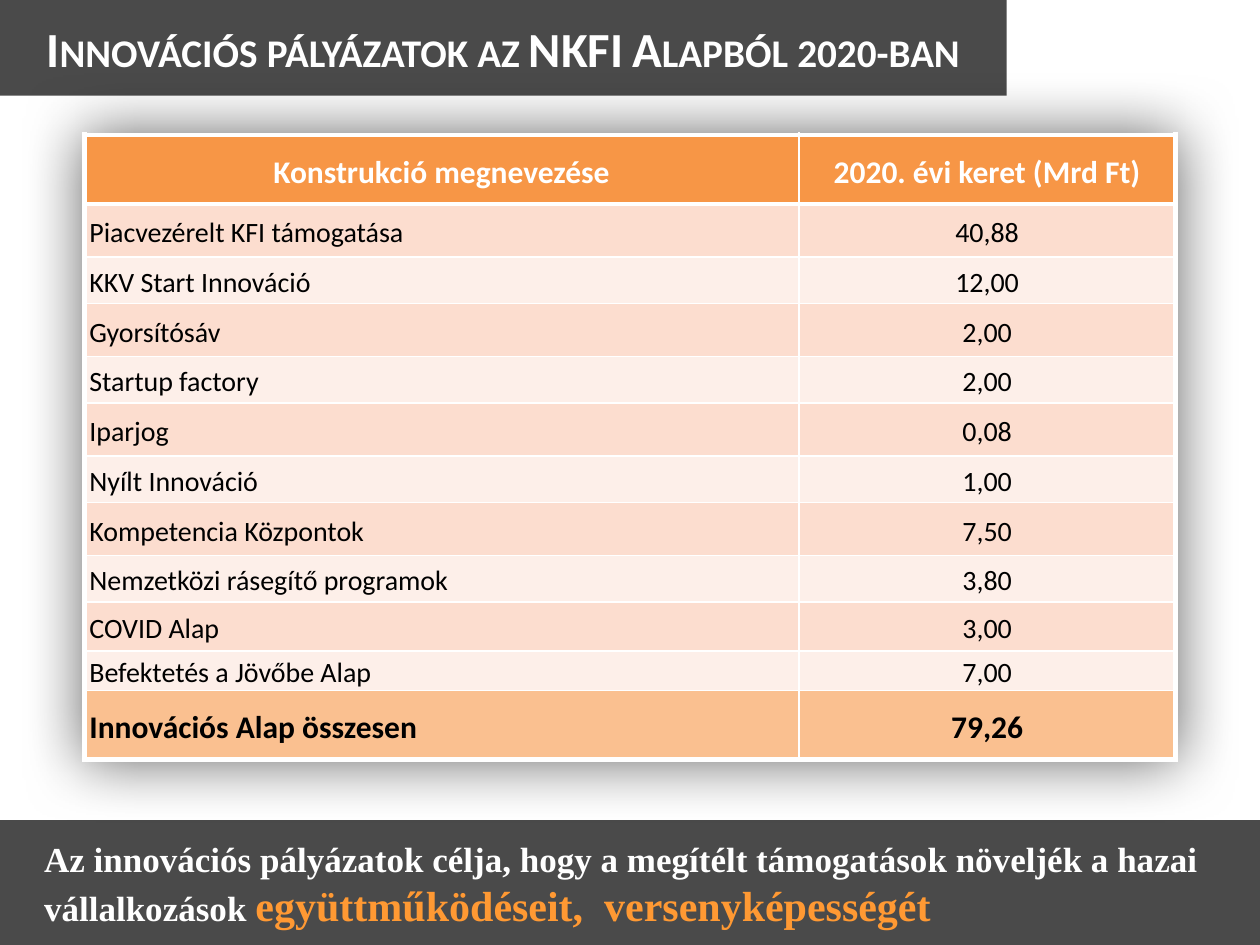
from lxml import etree
from pptx import Presentation
from pptx.dml.color import RGBColor
from pptx.enum.shapes import MSO_SHAPE
from pptx.enum.text import MSO_ANCHOR, PP_ALIGN
from pptx.oxml import parse_xml
from pptx.oxml.ns import qn
from pptx.util import Inches, Pt

RECTANGLE = MSO_SHAPE.RECTANGLE
MIDDLE = MSO_ANCHOR.MIDDLE
LEFT, CENTER = PP_ALIGN.LEFT, PP_ALIGN.CENTER
DRAWING_NS = "http://schemas.openxmlformats.org/drawingml/2006/main"

TITLE = "Innovációs pályázatok az NKFI Alapból 2020-ban"
GOAL = "Az innovációs pályázatok célja, hogy a megítélt támogatások növeljék a hazai vállalkozások "
GOAL_EMPHASIS = "együttműködéseit,  versenyképességét"
BUDGET = [
    ("Konstrukció megnevezése", "2020. évi keret (Mrd Ft)"),
    ("Piacvezérelt KFI támogatása", "40,88"),
    ("KKV Start Innováció", "12,00"),
    ("Gyorsítósáv", "2,00"),
    ("Startup factory", "2,00"),
    ("Iparjog", "0,08"),
    ("Nyílt Innováció", "1,00"),
    ("Kompetencia Központok", "7,50"),
    ("Nemzetközi rásegítő programok", "3,80"),
    ("COVID Alap", "3,00"),
    ("Befektetés a Jövőbe Alap", "7,00"),
    ("Innovációs Alap összesen", "79,26"),
]
COLUMN_WIDTHS = [5.67, 2.99]
ROW_HEIGHTS = [0.55] + [0.42, 0.37] * 4 + [0.39, 0.31, 0.55]

THEME = {
    "heading_font": "Calibri", "goal_font": "Times New Roman",
    "white": "FFFFFF", "black": "000000", "emphasis": "FF9933",
    "header": "F79646", "total": "FAC090", "bands": ("FDEFE9", "FCDDCF"),
    "band_alpha": 71, "title_size": 28, "goal_size": 20, "emphasis_size": 24,
    "strong_size": 18, "row_size": 16, "thick": 3, "thin": 1,
}


def add_text(paragraph, text, *, size, color, font=THEME["heading_font"],
             bold=False, small_caps=False, align=LEFT, spacing=None):
    paragraph.alignment = align
    if spacing:
        paragraph.line_spacing = spacing
    run = paragraph.add_run()
    run.text = text
    run.font.name = font
    run.font.size = Pt(size)
    run.font.bold = bold
    run.font.color.rgb = RGBColor.from_string(color)
    if small_caps:
        run._r.get_or_add_rPr().set("cap", "small")


def add_band(slide, top, width, height, left_inset):
    band = slide.shapes.add_shape(RECTANGLE, 0, Inches(top), Inches(width), Inches(height))
    band.shadow.inherit = False
    band.line.fill.background()
    band.fill.solid()
    band.fill.fore_color.rgb = RGBColor.from_string(THEME["black"])
    color = band._element.spPr.find(qn("a:solidFill"))[0]
    etree.SubElement(color, qn("a:alpha"), val=str(THEME["band_alpha"] * 1000))
    frame = band.text_frame
    frame.word_wrap = True
    frame.vertical_anchor = MIDDLE
    frame.margin_left = Inches(left_inset)
    return frame.paragraphs[0]


def set_borders(cell, widths):
    properties = cell._tc.get_or_add_tcPr()
    for position, (side, width) in enumerate(zip("LRTB", widths)):
        properties.insert(position, parse_xml(
            f'<a:ln{side} xmlns:a="{DRAWING_NS}" w="{Pt(width)}"><a:solidFill>'
            f'<a:srgbClr val="{THEME["white"]}"/></a:solidFill></a:ln{side}>'))


def add_budget_table(slide):
    last_row, last_column = len(BUDGET) - 1, len(COLUMN_WIDTHS) - 1
    table = slide.shapes.add_table(
        len(BUDGET), len(COLUMN_WIDTHS), Inches(0.67), Inches(1.07),
        Inches(sum(COLUMN_WIDTHS)), Inches(sum(ROW_HEIGHTS))).table
    table._tbl.tblPr.insert(0, parse_xml(
        f'<a:effectLst xmlns:a="{DRAWING_NS}"><a:outerShdw blurRad="{Inches(0.5)}" dist="0" '
        f'algn="ctr" rotWithShape="0"><a:srgbClr val="{THEME["black"]}">'
        '<a:alpha val="60000"/></a:srgbClr></a:outerShdw></a:effectLst>'))
    for column, width in zip(table.columns, COLUMN_WIDTHS):
        column.width = Inches(width)
    for row, height in zip(table.rows, ROW_HEIGHTS):
        row.height = Inches(height)
    for r, entries in enumerate(BUDGET):
        is_header, is_total = r == 0, r == last_row
        strong = is_header or is_total
        fill = (THEME["header"] if is_header else
                THEME["total"] if is_total else THEME["bands"][r % 2])
        for c, entry in enumerate(entries):
            cell = table.cell(r, c)
            cell.fill.solid()
            cell.fill.fore_color.rgb = RGBColor.from_string(fill)
            cell.vertical_anchor = MIDDLE
            cell.margin_left = cell.margin_right = Inches(0.04)
            cell.margin_top = cell.margin_bottom = 0
            add_text(cell.text_frame.paragraphs[0], entry, bold=strong, spacing=1.15,
                     size=THEME["strong_size" if strong else "row_size"],
                     color=THEME["white" if is_header else "black"],
                     align=CENTER if is_header or c else LEFT)
            thick_sides = (c == 0, c == last_column, r <= 1, strong)
            set_borders(cell, [THEME["thick" if thick else "thin"] for thick in thick_sides])


def main():
    """Build the slide on the 2020 innovation grants and save it."""
    deck = Presentation()
    deck.slide_width, deck.slide_height = Inches(10), Inches(7.5)
    slide = deck.slides.add_slide(deck.slide_layouts[6])

    heading = add_band(slide, 0, 7.99, 0.76, 0.1)
    add_text(heading, TITLE, size=THEME["title_size"], color=THEME["white"],
             bold=True, small_caps=True, align=CENTER)

    goal = add_band(slide, 6.51, 10, 1, 0.35)
    for text, size, color in ((GOAL, "goal_size", "white"),
                              (GOAL_EMPHASIS, "emphasis_size", "emphasis")):
        add_text(goal, text, size=THEME[size], color=THEME[color],
                 font=THEME["goal_font"], bold=True)

    add_budget_table(slide)
    deck.save("out.pptx")


if __name__ == "__main__":
    main()
